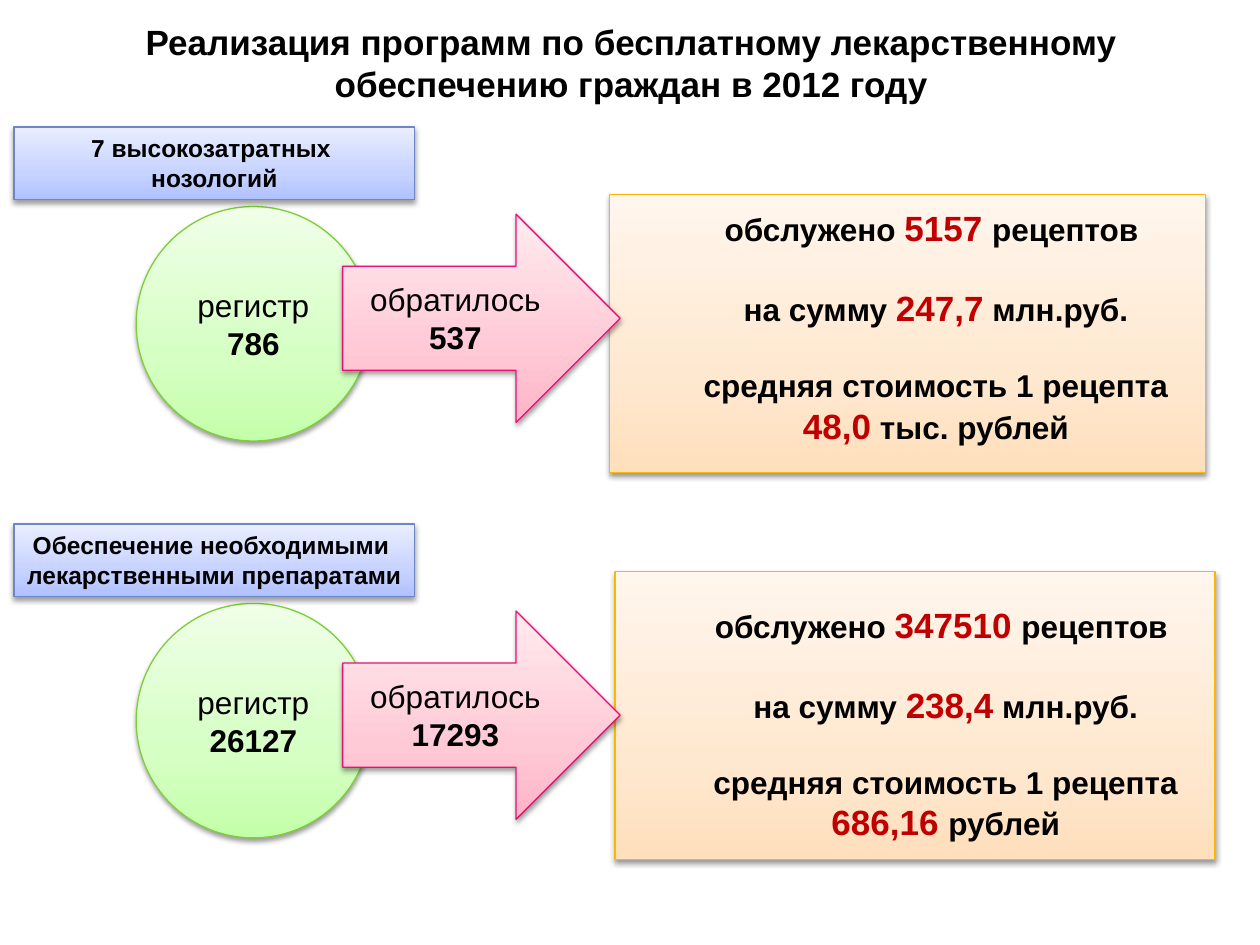
from dataclasses import dataclass

from lxml.etree import SubElement
from pptx import Presentation
from pptx.dml.color import RGBColor
from pptx.enum.shapes import MSO_SHAPE as Preset
from pptx.enum.text import MSO_ANCHOR as Anchor, MSO_AUTO_SIZE as AutoSize, PP_ALIGN as Align
from pptx.oxml import parse_xml
from pptx.oxml.ns import nsdecls, qn
from pptx.util import Pt

COLORS = {"text": "000000", "number": "C00000", "shadow": "000000"}
LINES = {"label": "6E86C6", "circle": "7CD036", "arrow": "EA0F77", "panel": "FEB604"}
GRADIENTS = {
    "label": ("B0C1FF", "C6D2FF", "E9EEFF"),
    "circle": ("C4FFAA", "D5FFC3", "EFFFE8"),
    "arrow": ("FFB3C6", "FFC9D6", "FFEBEF"),
    "panel": ("FFDFBC", "FFE8D0", "FFF6ED"),
}
STOPS = (0, 35, 100)
FONT = "Arial"
ROW_STEP = 226.8
LINE_GAP = 21.6


@dataclass(frozen=True)
class Box:
    left: float
    top: float
    width: float
    height: float

    def lowered(self, distance: float) -> "Box":
        return Box(self.left, self.top + distance, self.width, self.height)

    def lengths(self) -> tuple:
        return Pt(self.left), Pt(self.top), Pt(self.width), Pt(self.height)


@dataclass(frozen=True)
class Program:
    label: str
    label_wraps: bool
    registered: str
    applied: str
    prescriptions: str
    total: str
    cost: tuple
    panel: Box
    results: Box


LABEL = Box(8, 72.6, 229, 41.4)
CIRCLE = Box(77.8, 118, 134, 134)
ARROW = Box(195.8, 122.4, 158.6, 119)

PROGRAMS = (
    Program("7 высокозатратных \vнозологий", True, "786", "537", "5157 ", "247,7",
            ("48,0", " тыс. рублей"),
            Box(348.5, 111.3, 340.5, 158.7), Box(393.3, 114.5, 283, 145.4)),
    Program("Обеспечение необходимыми \vлекарственными препаратами", False, "26127", "17293",
            "347510 ", "238,4", ("686,16 ", "рублей"),
            Box(351.4, 326.6, 343, 164.6), Box(398.9, 341.3, 283, 145.4)),
)


def style_run(run, size: float, bold: bool, color: str = "text") -> None:
    run.font.name = FONT
    run.font.size = Pt(size)
    run.font.bold = bold
    run.font.color.rgb = RGBColor.from_string(COLORS[color])


def add_block(slide, preset, box: Box, style: str):
    shape = slide.shapes.add_shape(preset, *box.lengths())
    properties = shape._element.spPr
    stops = "".join(f'<a:gs pos="{stop * 1000}"><a:srgbClr val="{color}"/></a:gs>'
                    for stop, color in zip(STOPS, GRADIENTS[style]))
    properties.append(parse_xml(
        f'<a:gradFill {nsdecls("a")} rotWithShape="1"><a:gsLst>{stops}</a:gsLst>'
        '<a:lin ang="16200000" scaled="0"/></a:gradFill>'))
    shape.line.color.rgb = RGBColor.from_string(LINES[style])
    shape.line.width = Pt(0.75)
    shape.shadow.inherit = False
    effects = properties.find(qn("a:effectLst"))
    shadow = SubElement(effects, qn("a:outerShdw"), blurRad=str(Pt(3.1)), dist=str(Pt(1.6)),
                        dir="5400000", rotWithShape="0")
    tint = SubElement(shadow, qn("a:srgbClr"), val=COLORS["shadow"])
    SubElement(tint, qn("a:alpha"), val="38000")
    return shape


def add_count(slide, preset, box: Box, style: str, caption: str, count: str) -> None:
    shape = add_block(slide, preset, box, style)
    shape.text_frame.vertical_anchor = Anchor.MIDDLE
    para = shape.text_frame.paragraphs[0]
    para.text = f"{caption}\v{count}"
    para.alignment = Align.CENTER
    for run, bold in zip(para.runs, (False, True)):
        style_run(run, 18, bold)


def add_label(slide, box: Box, text: str, wraps: bool) -> None:
    frame = add_block(slide, Preset.RECTANGLE, box, "label").text_frame
    frame.word_wrap = wraps
    frame.auto_size = AutoSize.SHAPE_TO_FIT_TEXT
    frame.vertical_anchor = Anchor.TOP
    para = frame.paragraphs[0]
    para.text = text
    para.alignment = Align.CENTER
    for run in para.runs:
        style_run(run, 14, True)


def add_results(slide, program: Program) -> None:
    add_block(slide, Preset.RECTANGLE, program.panel, "panel")
    frame = slide.shapes.add_textbox(*program.results.lengths()).text_frame
    frame.word_wrap = False
    frame.auto_size = AutoSize.SHAPE_TO_FIT_TEXT
    lines = (
        ("обслужено ", program.prescriptions, "рецептов "),
        ("на сумму ", program.total, " млн.руб."),
        ("средняя стоимость 1 рецепта",),
        ("", *program.cost),
    )
    for index, parts in enumerate(lines):
        para = frame.add_paragraph() if index else frame.paragraphs[0]
        para.alignment = Align.CENTER
        if index < 2:
            para.space_after = Pt(LINE_GAP)
        for position, part in enumerate(parts):
            if part:
                span = para.add_run()
                span.text = part
                is_number = position == 1
                style_run(span, 20 if is_number else 18, True, "number" if is_number else "text")


def add_program(slide, program: Program, drop: float) -> None:
    add_count(slide, Preset.OVAL, CIRCLE.lowered(drop), "circle", "регистр", program.registered)
    add_results(slide, program)
    add_count(slide, Preset.RIGHT_ARROW, ARROW.lowered(drop), "arrow", "обратилось",
              program.applied)
    add_label(slide, LABEL.lowered(drop), program.label, program.label_wraps)


def set_title(slide, text: str) -> None:
    title = slide.shapes.title
    title.left, title.top, title.width, title.height = Box(36.7, 8, 648, 44).lengths()
    frame = title.text_frame
    frame.text = text
    frame.word_wrap = True
    frame.auto_size = AutoSize.NONE
    frame.vertical_anchor = Anchor.TOP
    frame.margin_left = frame.margin_right = Pt(3)
    frame.margin_top = frame.margin_bottom = Pt(3.6)
    para = frame.paragraphs[0]
    para.alignment = Align.CENTER
    style_run(para.runs[0], 20, True)


def main() -> None:
    deck = Presentation()
    deck.slide_width, deck.slide_height = Pt(720), Pt(540)
    page = deck.slides.add_slide(deck.slide_layouts[5])
    set_title(page, "Реализация программ по бесплатному лекарственному "
                    "обеспечению граждан в 2012 году")
    for row, program in enumerate(PROGRAMS):
        add_program(page, program, row * ROW_STEP)
    deck.save("out.pptx")


if __name__ == "__main__":
    main()
